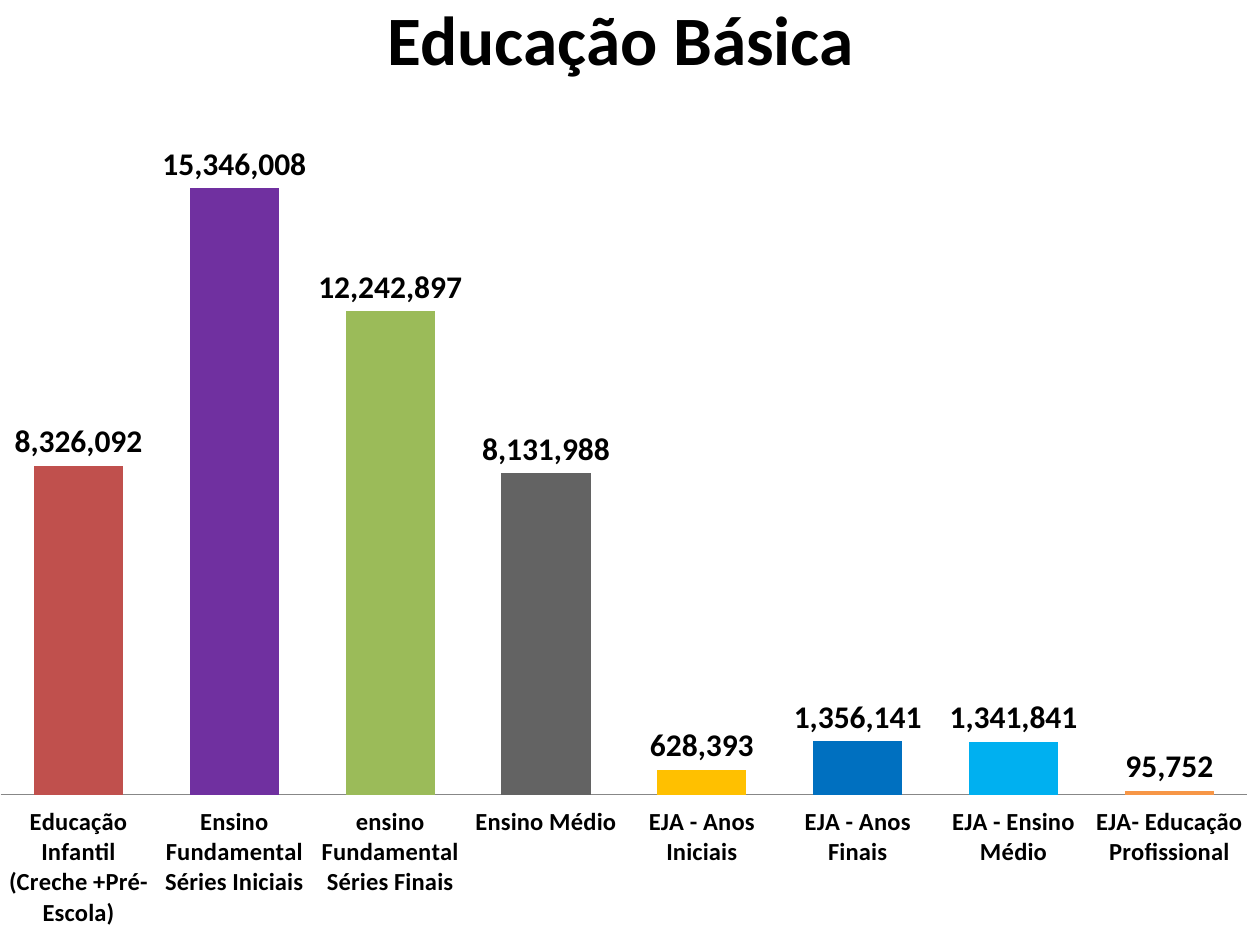
from lxml import etree
from pptx import Presentation
from pptx.chart.data import CategoryChartData
from pptx.dml.color import RGBColor
from pptx.enum.chart import XL_CHART_TYPE, XL_LABEL_POSITION, XL_TICK_LABEL_POSITION, XL_TICK_MARK
from pptx.enum.text import MSO_ANCHOR, MSO_AUTO_SIZE, PP_ALIGN
from pptx.oxml.ns import qn
from pptx.util import Emu, Pt

COLUMNS = XL_CHART_TYPE.COLUMN_CLUSTERED
OUTSIDE_END = XL_LABEL_POSITION.OUTSIDE_END
LOW = XL_TICK_LABEL_POSITION.LOW
NO_TICK = XL_TICK_MARK.NONE
MIDDLE = MSO_ANCHOR.MIDDLE
NO_AUTOFIT = MSO_AUTO_SIZE.NONE
CENTER = PP_ALIGN.CENTER

PX_PER_INCH = 126
TITLE_ONLY = 5

ENROLMENT = [
    ("Educação Infantil (Creche +Pré-Escola)", 8326092, "C0504D"),
    ("Ensino Fundamental Séries Iniciais", 15346008, "7030A0"),
    ("ensino Fundamental Séries Finais", 12242897, "9BBB59"),
    ("Ensino Médio", 8131988, "636363"),
    ("EJA - Anos Iniciais", 628393, "FFC000"),
    ("EJA - Anos Finais", 1356141, "0070C0"),
    ("EJA - Ensino Médio", 1341841, "00B0F0"),
    ("EJA- Educação Profissional", 95752, "F79646"),
]


def px(length):
    return Emu(round(length * 914400 / PX_PER_INCH))


def rgb(value):
    return RGBColor.from_string(value)


class SlideBuilder:
    """Holds the style and the current slide, and adds each kind of element."""

    font_name = "Calibri"
    text_color = "000000"
    axis_color = "878787"

    def __init__(self, presentation):
        self.slide = presentation.slides.add_slide(presentation.slide_layouts[TITLE_ONLY])

    def style(self, font, size, bold=True):
        font.name = self.font_name
        font.size = Pt(size)
        font.bold = bold
        font.color.rgb = rgb(self.text_color)

    def title(self, wording, left, top, width, height, size):
        heading = self.slide.shapes.title
        heading.left, heading.top = px(left), px(top)
        heading.width, heading.height = px(width), px(height)
        frame = heading.text_frame
        frame.text = wording
        frame.auto_size = NO_AUTOFIT
        frame.vertical_anchor = MIDDLE
        frame.paragraphs[0].alignment = CENTER
        self.style(frame.paragraphs[0].runs[0].font, size)

    def column_chart(self, rows, left, top, width, height, maximum, plot_box):
        names, values, colors = zip(*rows)
        chart_data = CategoryChartData(number_format="#,##0")
        chart_data.categories = names
        chart_data.add_series("Series 1", values)
        chart = self.slide.shapes.add_chart(
            COLUMNS, px(left), px(top), px(width), px(height), chart_data).chart
        chart.has_legend = False
        chart.has_title = False
        self.style(chart.font, 18, bold=False)

        category_axis = chart.category_axis
        category_axis.major_tick_mark = category_axis.minor_tick_mark = NO_TICK
        category_axis.tick_label_position = LOW
        category_axis.format.line.color.rgb = rgb(self.axis_color)
        self.style(category_axis.tick_labels.font, 14)
        value_axis = chart.value_axis
        value_axis.visible = False
        value_axis.has_major_gridlines = False
        value_axis.minimum_scale, value_axis.maximum_scale = 0, maximum

        plot = chart.plots[0]
        plot.gap_width = 75
        plot.vary_by_categories = False
        plot.has_data_labels = True
        labels = plot.data_labels
        labels.show_value = True
        labels.number_format = "#,##0"
        labels.number_format_is_linked = False
        labels.position = OUTSIDE_END
        self.style(labels.font, 18)
        for index, color in enumerate(colors):
            fill = plot.series[0].points[index].format.fill
            fill.solid()
            fill.fore_color.rgb = rgb(color)
        self.place_plot(chart, plot_box)

    def place_plot(self, chart, plot_box):
        plot_area = chart.element.find(".//" + qn("c:plotArea"))
        for automatic in plot_area.findall(qn("c:layout")):
            plot_area.remove(automatic)
        layout = etree.Element(qn("c:layout"))
        plot_area.insert(0, layout)
        manual = etree.SubElement(layout, qn("c:manualLayout"))
        settings = [("layoutTarget", "inner"), ("xMode", "edge"), ("yMode", "edge")]
        settings += zip("xywh", plot_box)
        for tag, setting in settings:
            etree.SubElement(manual, qn("c:" + tag)).set("val", str(setting))


def main():
    presentation = Presentation()
    presentation.slide_width, presentation.slide_height = px(1260), px(945)
    builder = SlideBuilder(presentation)
    builder.title("Educação Básica", 54, 4, 1134, 68, 39.6)
    builder.column_chart(ENROLMENT, 0, 66, 1260, 878, 18000000, (0, 0.02, 0.99, 0.81))
    presentation.save("out.pptx")


if __name__ == "__main__":
    main()
